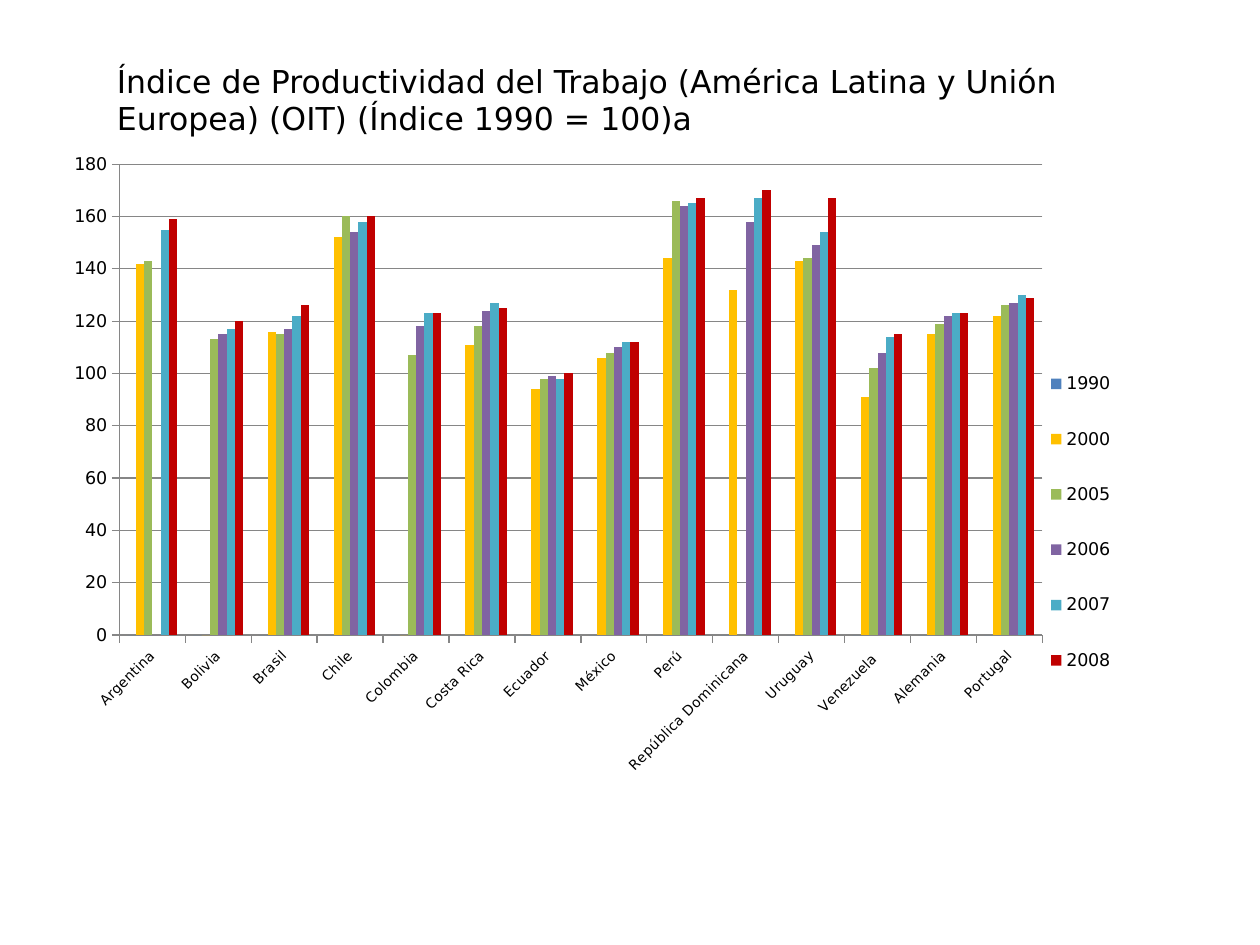
import pptx
import pptx.chart.data
import pptx.dml.color
import pptx.enum.chart
import pptx.enum.text
import pptx.oxml
import pptx.oxml.ns
import pptx.util
from pptx.util import Inches

FONT = "DejaVu Sans"


def color(hex_code):
    return pptx.dml.color.RGBColor.from_string(hex_code)


def manual_layout(x, y, w, h, inner=False):
    """Layout element in fractions of the chart area."""
    target = '<c:layoutTarget val="inner"/>' if inner else ""
    sizes = "".join(f'<c:{tag} val="{value}"/>' for tag, value in zip("xywh", (x, y, w, h)))
    return pptx.oxml.parse_xml(
        f'<c:layout {pptx.oxml.ns.nsdecls("c")}><c:manualLayout>{target}'
        f'<c:xMode val="edge"/><c:yMode val="edge"/>{sizes}</c:manualLayout></c:layout>')


deck = pptx.Presentation()
deck.slide_width, deck.slide_height = Inches(10), Inches(7.5)
slide = deck.slides.add_slide(deck.slide_layouts[6])

# Productivity index by country and year
countries = ["Argentina", "Bolivia", "Brasil", "Chile", "Colombia", "Costa Rica", "Ecuador",
             "México", "Perú", "República Dominicana", "Uruguay", "Venezuela ", "Alemania",
             "Portugal"]
years = [
    ("1990", "4F81BD", [0] * len(countries)),
    ("2000", "FFC000", [142, 0, 116, 152, 0, 111, 94, 106, 144, 132, 143, 91, 115, 122]),
    ("2005", "9BBB59", [143, 113, 115, 160, 107, 118, 98, 108, 166, 0, 144, 102, 119, 126]),
    ("2006", "8064A2", [0, 115, 117, 154, 118, 124, 99, 110, 164, 158, 149, 108, 122, 127]),
    ("2007", "4BACC6", [155, 117, 122, 158, 123, 127, 98, 112, 165, 167, 154, 114, 123, 130]),
    ("2008", "C00000", [159, 120, 126, 160, 123, 125, 100, 112, 167, 170, 167, 115, 123, 129]),
]
index_data = pptx.chart.data.CategoryChartData()
index_data.categories = countries
for year, _, values in years:
    index_data.add_series(year, values)

chart = slide.shapes.add_chart(
    pptx.enum.chart.XL_CHART_TYPE.COLUMN_CLUSTERED,
    Inches(0.43), Inches(1.15), Inches(8.62), Inches(5.12), index_data).chart
chart.has_title = False
chart.font.name = FONT
chart.font.size = pptx.util.Pt(10)
chart.font.color.rgb = color("000000")

# Columns
columns = chart.plots[0]
columns.gap_width = 197
columns.overlap = 0
columns.vary_by_categories = False
for series, (_, fill, _) in zip(columns.series, years):
    series.format.fill.solid()
    series.format.fill.fore_color.rgb = color(fill)
    series.invert_if_negative = False

# Axes and gridlines
country_axis, index_axis = chart.category_axis, chart.value_axis
index_axis.minimum_scale, index_axis.maximum_scale, index_axis.major_unit = 0, 180, 20
index_axis.has_major_gridlines = True
for axis in (country_axis, index_axis):
    axis.major_tick_mark = pptx.enum.chart.XL_TICK_MARK.OUTSIDE
for ruled in (country_axis, index_axis, index_axis.major_gridlines):
    ruled.format.line.color.rgb = color("868686")
    ruled.format.line.width = pptx.util.Pt(0.75)
country_labels = country_axis.tick_labels.font
country_labels.size = pptx.util.Pt(7.9)
country_labels.name = FONT
country_labels.color.rgb = color("000000")
country_axis._element.txPr.bodyPr.set("rot", "-2700000")

# Legend and plot placement
chart.has_legend = True
chart.legend.position = pptx.enum.chart.XL_LEGEND_POSITION.RIGHT
chart.legend.include_in_layout = False
plot_area = chart._chartSpace.chart.plotArea
legend = chart.legend._element
for part in (plot_area, legend):
    for layout in part.findall(pptx.oxml.ns.qn("c:layout")):
        part.remove(layout)
plot_area.insert(0, manual_layout(0.06, 0.03, 0.85, 0.73, inner=True))
legend.find(pptx.oxml.ns.qn("c:legendPos")).addnext(manual_layout(0.9, 0.3, 0.09, 0.57))

# Heading
heading = slide.shapes.add_textbox(Inches(0.83), Inches(0.44), Inches(8.58), Inches(0.7)).text_frame
heading.word_wrap = True
heading.auto_size = pptx.enum.text.MSO_AUTO_SIZE.SHAPE_TO_FIT_TEXT
heading_run = heading.paragraphs[0].add_run()
heading_run.text = ("Índice de Productividad del Trabajo (América Latina y Unión Europea) "
                    "(OIT) (Índice 1990 = 100)a")
heading_run.font.name = FONT
heading_run.font.size = pptx.util.Pt(18)
heading_run.font.color.rgb = color("000000")

deck.save("out.pptx")
